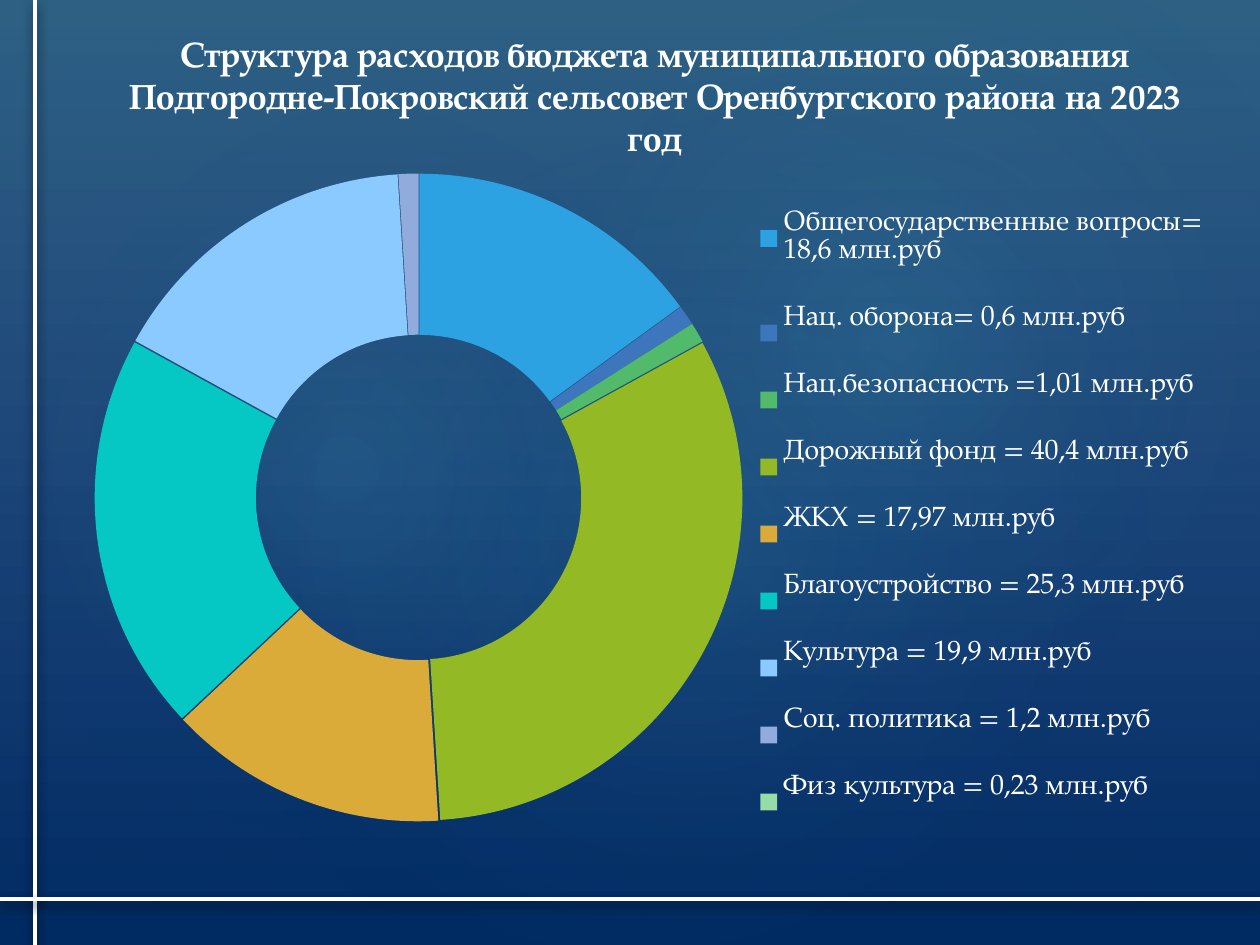
"""Build the slide on the structure of the 2023 municipal budget spending."""
from dataclasses import dataclass

from lxml.etree import SubElement
from pptx import Presentation
from pptx.chart.data import CategoryChartData
from pptx.dml.color import RGBColor
from pptx.enum.chart import XL_CHART_TYPE, XL_LEGEND_POSITION
from pptx.enum.shapes import MSO_CONNECTOR, MSO_SHAPE
from pptx.enum.text import PP_ALIGN
from pptx.oxml import parse_xml
from pptx.oxml.ns import nsdecls, qn
from pptx.util import Inches, Pt

WIDTH, HEIGHT = Inches(10), Inches(7.5)


@dataclass(frozen=True)
class Theme:
    font: str = "TeX Gyre Pagella"
    text: str = "FFFFFF"
    sky: str = "455890"
    deep: str = "00295F"
    haze: str = "03706E"
    navy: str = "073E87"
    glow: str = "5AFBF8"
    title_size: int = 20
    legend_size: int = 16
    line_width: float = 2.25


@dataclass(frozen=True)
class Box:
    """Left, top, width and height in percent of the slide or chart."""
    x: float
    y: float
    w: float
    h: float

    def emu(self) -> tuple[int, int, int, int]:
        return (across(self.x), down(self.y), across(self.w), down(self.h))


@dataclass(frozen=True)
class Glow:
    box: Box
    rotation: float
    opacity: int


@dataclass(frozen=True)
class Expense:
    label: str
    percent: int
    color: str


THEME = Theme()
GLOWS = (
    Glow(Box(15, 15.2, 79.2, 83.2), 328.7, 7),
    Glow(Box(-3, 17.1, 60.6, 65.3), 294.3, 8),
    Glow(Box(35.8, 1.7, 70.9, 69.3), 328.7, 8),
)
EXPENSES = (
    Expense("Общегосударственные вопросы= 18,6 млн.руб", 15, "2CA2E3"),
    Expense("Нац. оборона= 0,6 млн.руб", 1, "3D76BC"),
    Expense("Нац.безопасность =1,01 млн.руб", 1, "51BA6B"),
    Expense("Дорожный фонд = 40,4 млн.руб", 32, "93B924"),
    Expense("ЖКХ = 17,97 млн.руб", 14, "DBAB39"),
    Expense("Благоустройство = 25,3 млн.руб", 20, "05C8C4"),
    Expense("Культура = 19,9 млн.руб", 16, "8BCAFF"),
    Expense("Соц. политика = 1,2 млн.руб", 1, "91ABDD"),
    Expense("Физ культура = 0,23 млн.руб", 0, "97DCA6"),
)
TITLE = ("Структура расходов бюджета муниципального образования "
         "Подгородне-Покровский сельсовет Оренбургского района на 2023 год")


def across(percent: float) -> int:
    return round(percent * WIDTH / 100)


def down(percent: float) -> int:
    return round(percent * HEIGHT / 100)


def style_font(font, size: float, bold: bool = False) -> None:
    font.name, font.size, font.bold = THEME.font, Pt(size), bold
    font.color.rgb = RGBColor.from_string(THEME.text)


def paint_background(s) -> None:
    fill = s.background.fill
    fill.gradient()
    fill.gradient_angle = 270
    for stop, color, place in zip(fill.gradient_stops, (THEME.sky, THEME.deep), (0, 1)):
        stop.color.rgb = RGBColor.from_string(color)
        stop.position = place


def add_veil(s, kind, box: Box, stops, path: str, rotation: float = 0) -> None:
    """Add a translucent gradient shape; stops are (position, colour, opacity)."""
    sp = s.shapes.add_shape(kind, *box.emu())
    sp.rotation = rotation
    sp.shadow.inherit = False
    sp.line.fill.background()
    marks = "".join(
        f'<a:gs pos="{pos * 1000}"><a:srgbClr val="{color}">'
        f'<a:alpha val="{opacity * 1000}"/></a:srgbClr></a:gs>'
        for pos, color, opacity in stops)
    grad = parse_xml(f'<a:gradFill {nsdecls("a")} rotWithShape="1">'
                     f'<a:gsLst>{marks}</a:gsLst>{path}</a:gradFill>')
    sp._element.spPr.find(qn("a:prstGeom")).addnext(grad)


def add_rule(s, x1: float, y1: float, x2: float, y2: float) -> None:
    line = s.shapes.add_connector(
        MSO_CONNECTOR.STRAIGHT, across(x1), down(y1), across(x2), down(y2))
    line.line.color.rgb = RGBColor.from_string(THEME.text)
    line.line.width = Pt(THEME.line_width)
    line._element.spPr.append(parse_xml(
        f'<a:effectLst {nsdecls("a")}><a:outerShdw blurRad="{Pt(6)}" dist="{Pt(3)}" '
        'dir="5400000"><a:srgbClr val="000000"><a:alpha val="60000"/></a:srgbClr>'
        '</a:outerShdw></a:effectLst>'))


def add_title(s, box: Box) -> None:
    tf = s.shapes.add_textbox(*box.emu()).text_frame
    tf.word_wrap = True
    tf.text = TITLE
    p = tf.paragraphs[0]
    p.alignment = PP_ALIGN.CENTER
    style_font(p.runs[0].font, THEME.title_size, bold=True)


def set_layout(parent, box: Box, inner: bool = False) -> None:
    """Place a chart part within the chart's area."""
    for old in parent.findall(qn("c:layout")):
        parent.remove(old)
    target = '<c:layoutTarget val="inner"/>' if inner else ""
    values = "".join(f'<c:{key} val="{getattr(box, key) / 100:.4f}"/>' for key in "xywh")
    layout = parse_xml(
        f'<c:layout {nsdecls("c")}><c:manualLayout>{target}<c:xMode val="edge"/>'
        f'<c:yMode val="edge"/>{values}</c:manualLayout></c:layout>')
    if inner:
        parent.insert(0, layout)
    else:
        parent.find(qn("c:legendPos")).addnext(layout)


def add_spending_chart(s, box: Box) -> None:
    data = CategoryChartData()
    data.categories = [e.label for e in EXPENSES]
    data.add_series("Series 1", [e.percent for e in EXPENSES])
    chart = s.shapes.add_chart(XL_CHART_TYPE.DOUGHNUT, *box.emu(), data).chart
    chart.has_title = False
    style_font(chart.font, THEME.legend_size)
    chart.has_legend = True
    chart.legend.position = XL_LEGEND_POSITION.RIGHT
    chart.legend.include_in_layout = False
    style_font(chart.legend.font, THEME.legend_size)
    plot = chart.plots[0]
    plot.vary_by_categories = True
    for i, expense in enumerate(EXPENSES):
        point = plot.series[0].points[i].format
        point.fill.solid()
        point.fill.fore_color.rgb = RGBColor.from_string(expense.color)
        point.line.fill.background()
    donut = plot._element
    hole = donut.find(qn("c:holeSize"))
    if hole is None:
        hole = SubElement(donut, qn("c:holeSize"))
    hole.set("val", "50")
    for dot in donut.iter(qn("c:dPt")):
        explosion = parse_xml(f'<c:explosion {nsdecls("c")} val="1"/>')
        dot.find(qn("c:spPr")).addprevious(explosion)
    set_layout(donut.getparent(), Box(0.1, 6.7, 56.6, 85.6), inner=True)
    set_layout(chart.legend._element, Box(56.2, 6.2, 43, 89))


def main() -> None:
    prs = Presentation()
    prs.slide_width, prs.slide_height = WIDTH, HEIGHT
    s = prs.slides.add_slide(prs.slide_layouts[6])
    paint_background(s)
    add_veil(s, MSO_SHAPE.RECTANGLE, Box(0, 0, 100, 100),
             ((0, THEME.haze, 36), (100, THEME.navy, 10)),
             '<a:lin ang="5400000" scaled="0"/>')
    for glow in GLOWS:
        add_veil(s, MSO_SHAPE.OVAL, glow.box,
                 ((0, THEME.glow, glow.opacity), (58, THEME.navy, 0)),
                 '<a:path path="circle"><a:fillToRect l="50000" t="50000" '
                 'r="50000" b="50000"/></a:path>', glow.rotation)
    add_rule(s, 2.8, 0, 2.8, 100)
    add_rule(s, 0, 95.15, 100, 95.15)
    add_title(s, Box(7.5, 2.8, 89, 19.3))
    add_spending_chart(s, Box(7.5, 13.2, 90.6, 79.7))
    prs.save("out.pptx")


if __name__ == "__main__":
    main()
